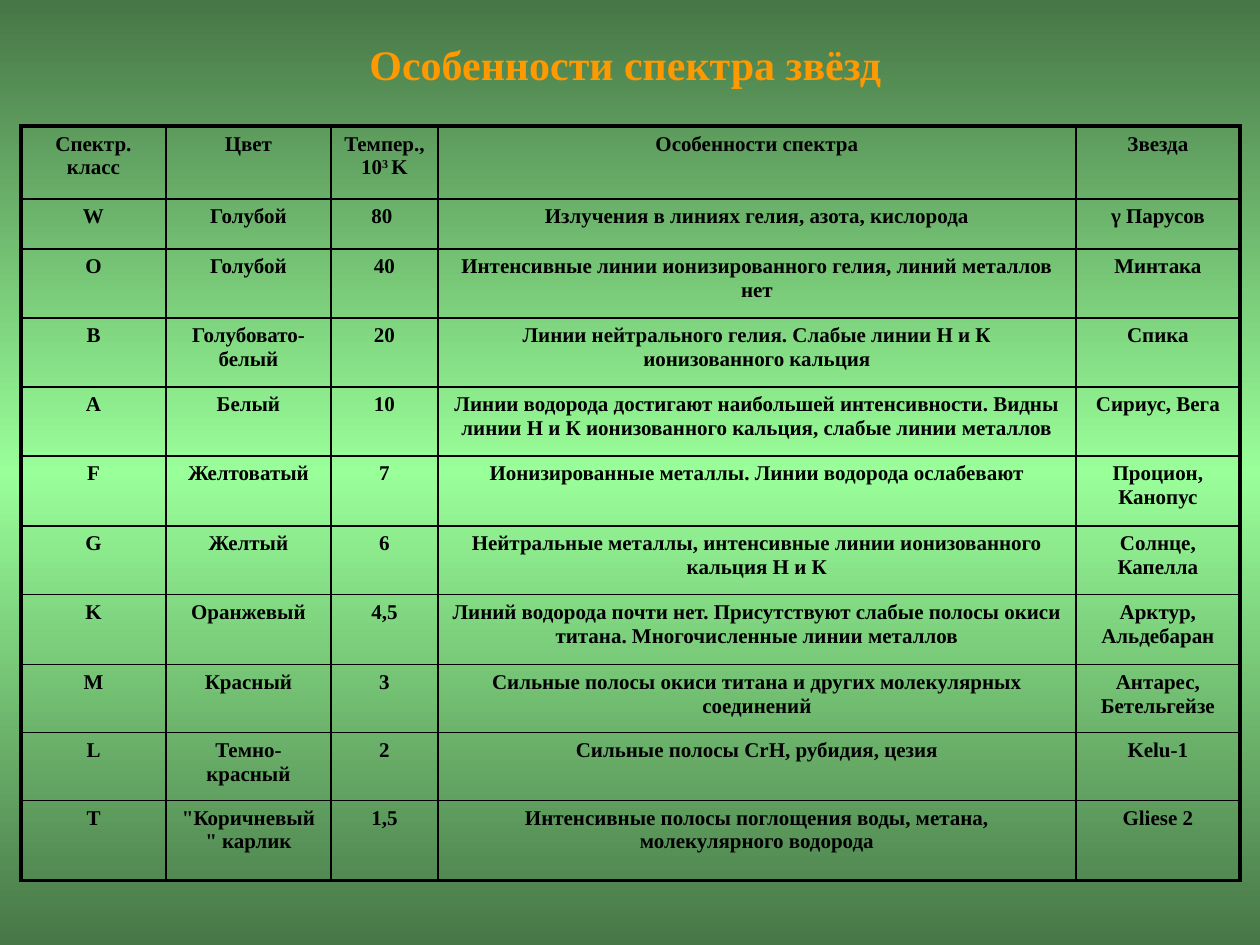
from copy import deepcopy

from lxml.etree import SubElement
from pptx import Presentation
from pptx.dml.color import RGBColor
from pptx.enum.text import MSO_AUTO_SIZE, PP_ALIGN
from pptx.oxml.ns import qn
from pptx.util import Pt

PX = 914400 / 126
W, H = 1260, 945
COLS = [145, 165, 107, 638, 164]
ROWS = [73, 50, 69, 69, 69, 70, 69, 70, 68, 68, 80]
THICK, THIN = Pt(2.25), Pt(1)
DATA = [
    ["Спектр. класс", "Цвет", "Темпер., 10^3 ^K", "Особенности спектра", "Звезда"],
    ["W", "Голубой", "80 ", "Излучения в линиях гелия, азота, кислорода", "γ Парусов"],
    ["O", "Голубой", "40", "Интенсивные линии ионизированного гелия, линий металлов нет", "Минтака"],
    ["B", "Голубовато-белый", "20",
     "Линии нейтрального гелия. Слабые линии Н и К ионизованного кальция", "Спика"],
    ["А", "Белый", "10",
     "Линии водорода достигают наибольшей интенсивности. Видны линии Н и К "
     "ионизованного кальция, слабые линии металлов", "Сириус, Вега"],
    ["F", "Желтоватый", "7", "Ионизированные металлы. Линии водорода ослабевают", "Процион, Канопус"],
    ["G", "Желтый", "6",
     "Нейтральные металлы, интенсивные линии ионизованного кальция Н и К", "Солнце, Капелла"],
    ["K", "Оранжевый", "4,5",
     "Линий водорода почти нет. Присутствуют слабые полосы окиси титана. "
     "Многочисленные линии металлов", "Арктур, Альдебаран"],
    ["M", "Красный", "3",
     "Сильные полосы окиси титана и других молекулярных соединений", "Антарес, Бетельгейзе"],
    ["L", "Темно-красный", "2", "Сильные полосы CrH, рубидия, цезия", "Kelu-1"],
    ["T", '"Коричневый" карлик', "1,5",
     "Интенсивные полосы поглощения воды, метана, молекулярного водорода", "Gliese 2"],
]


def px(*values):
    return [round(v * PX) for v in values]


def add_run(p, text, size, color):
    r = p.add_run()
    r.text = text
    for key, value in {"name": "Times New Roman", "size": Pt(size), "bold": True}.items():
        setattr(r.font, key, value)
    r.font.color.rgb = RGBColor.from_string(color)
    return r


prs = Presentation()
prs.slide_width, prs.slide_height = px(W, H)
s = prs.slides.add_slide(prs.slide_layouts[6])

# Background: dark, light, dark from top to bottom
fill = s.background.fill
fill.gradient()
fill.gradient_angle = 270
gs_list = s.element.find(".//" + qn("a:gsLst"))
gs_list.append(deepcopy(gs_list[0]))
for stop, pos, color in zip(fill.gradient_stops, (0, 0.5, 1), ("477647", "99FF99", "477647")):
    stop.position = pos
    stop.color.rgb = RGBColor.from_string(color)

# Table
table = s.shapes.add_table(len(ROWS), len(COLS), *px(21, 126, sum(COLS), sum(ROWS))).table
for flag in ("first_row", "horz_banding"):
    setattr(table, flag, False)
for col, width in zip(table.columns, px(*COLS)):
    col.width = width
for row, height in zip(table.rows, px(*ROWS)):
    row.height = height

for i, texts in enumerate(DATA):
    for j, text in enumerate(texts):
        cell = table.cell(i, j)
        p = cell.text_frame.paragraphs[0]
        p.alignment = PP_ALIGN.CENTER
        before = SubElement(p._p.get_or_add_pPr(), qn("a:spcBef"))
        SubElement(before, qn("a:spcPct"), val="20000")
        # Text between ^ marks is superscript
        for k, part in enumerate(text.split("^")):
            r = add_run(p, part, 12, "000000")
            if k % 2:
                r.font._element.set("baseline", "30000")

        # Thick outer frame, thin inner lines
        outer = {"L": j == 0, "R": j == len(COLS) - 1, "T": i == 0, "B": i == len(ROWS) - 1}
        tcPr = cell._tc.get_or_add_tcPr()
        for side, thick in outer.items():
            ln = SubElement(tcPr, qn("a:ln" + side), w=str(THICK if thick else THIN))
            SubElement(SubElement(ln, qn("a:solidFill")), qn("a:srgbClr"), val="000000")
        cell.fill.background()

# Title
tf = s.shapes.add_textbox(*px(357, 32, 538, 63)).text_frame
for key, value in {"word_wrap": False, "auto_size": MSO_AUTO_SIZE.SHAPE_TO_FIT_TEXT}.items():
    setattr(tf, key, value)
add_run(tf.paragraphs[0], "Особенности спектра звёзд", 24, "FF9900")

prs.save("out.pptx")
